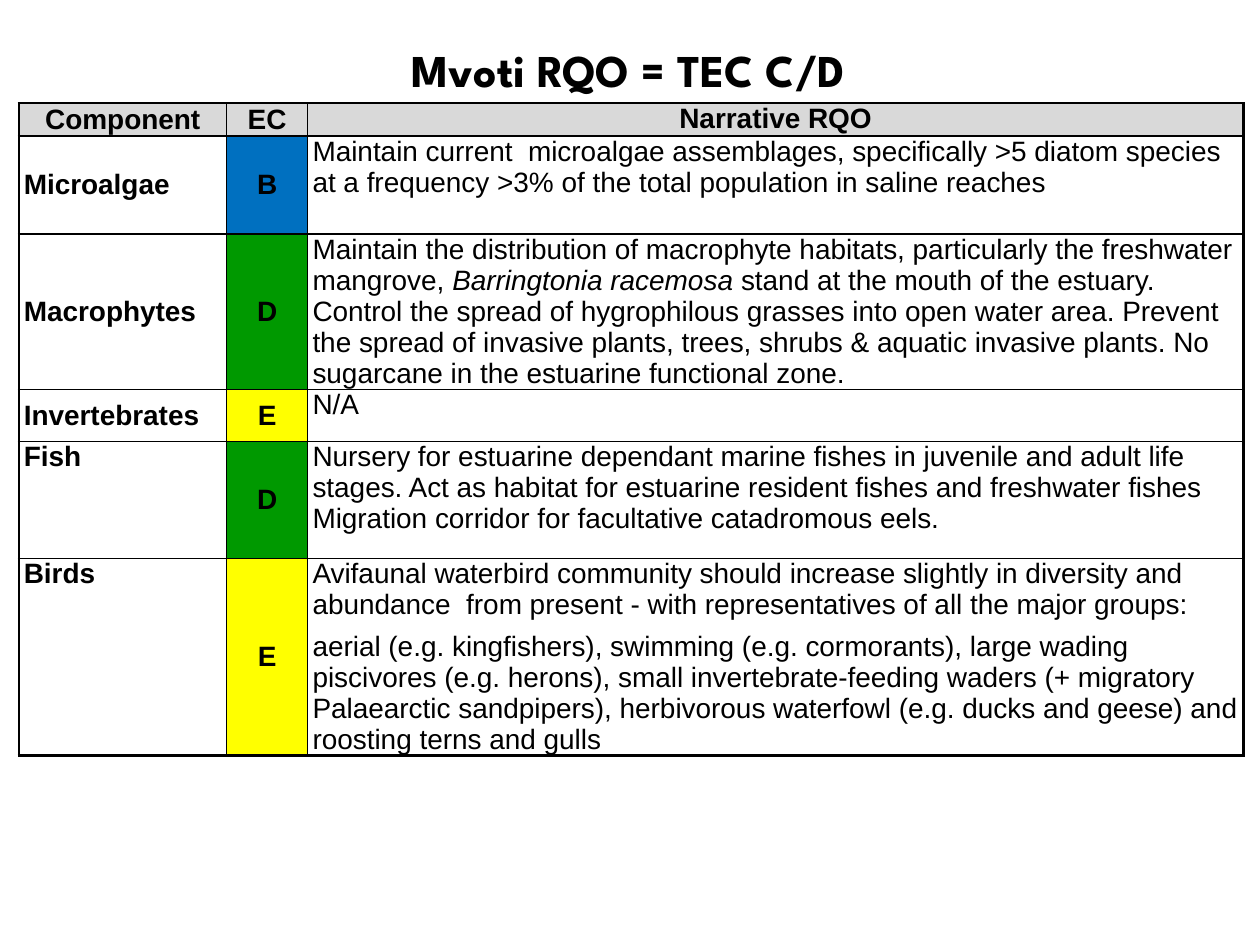
import pptx
import pptx.dml.color
import pptx.enum.text
import pptx.oxml
import pptx.oxml.ns
import pptx.util

Cm = pptx.util.Cm
Pt = pptx.util.Pt
RGBColor = pptx.dml.color.RGBColor
ALIGN = pptx.enum.text.PP_ALIGN
ANCHOR = pptx.enum.text.MSO_ANCHOR

BLACK = RGBColor(0, 0, 0)
WHITE = RGBColor(255, 255, 255)
GREY = RGBColor(0xD9, 0xD9, 0xD9)
BLUE = RGBColor(0, 0x70, 0xC0)
GREEN = RGBColor(0, 0x99, 0)
YELLOW = RGBColor(255, 255, 0)

CLASS_COLOURS = {"B": BLUE, "D": GREEN, "E": YELLOW}
HEADINGS = ["Component", "EC", "Narrative RQO"]
COLUMN_WIDTHS = [4.19, 1.63, 18.87]
ROW_HEIGHTS = [0.66, 1.98, 2.87, 1.04, 2.36, 2.87]

OBJECTIVES = [
    ("Microalgae", ANCHOR.MIDDLE, "B", 6, [[
        ("Maintain current  microalgae assemblages, specifically >5 diatom species "
         "at a frequency >3% of the total population in saline reaches", False)]]),
    ("Macrophytes", ANCHOR.MIDDLE, "D", 6, [[
        ("Maintain the distribution of macrophyte habitats, particularly the "
         "freshwater mangrove, ", False),
        ("Barringtonia racemosa ", True),
        ("stand at the mouth of the estuary. Control the spread of hygrophilous "
         "grasses into open water area. Prevent the spread of invasive plants, "
         "trees, shrubs & aquatic invasive plants. No sugarcane in the estuarine "
         "functional zone.", False)]]),
    ("Invertebrates", ANCHOR.MIDDLE, "E", 6, [[("N/A", False)]]),
    ("Fish", ANCHOR.TOP, "D", 0, [
        [("Nursery for estuarine dependant marine fishes in juvenile and adult life "
          "stages. Act as habitat for estuarine resident fishes and freshwater "
          "fishes", False)],
        [("Migration corridor for facultative catadromous eels.", False)]]),
    ("Birds", ANCHOR.TOP, "E", 6, [
        [("Avifaunal waterbird community should increase slightly in diversity and "
          "abundance  from present - with representatives of all the major groups:",
          False)],
        [("aerial (e.g. kingfishers), swimming (e.g. cormorants), large wading "
          "piscivores (e.g. herons), small invertebrate-feeding waders (+ migratory "
          "Palaearctic sandpipers), herbivorous waterfowl (e.g. ducks and geese) and "
          "roosting terns and gulls", False)]]),
]


class SlideBuilder:
    title_font = "League Spartan"
    table_font = "Arial"
    title_size = Pt(26)
    table_size = Pt(16)
    inner_line = Pt(1)
    outer_line = Pt(1.5)

    def __init__(self, slide):
        self.slide = slide

    def add_run(self, paragraph, text, font, size, bold, italic=False):
        run = paragraph.add_run()
        run.text = text
        run.font.name = font
        run.font.size = size
        run.font.bold = bold
        run.font.italic = italic
        run.font.color.rgb = BLACK

    def title(self, text, left, top, width, height):
        shape = self.slide.shapes.title
        shape.left, shape.top = Cm(left), Cm(top)
        shape.width, shape.height = Cm(width), Cm(height)
        shape.text_frame.vertical_anchor = ANCHOR.MIDDLE
        paragraph = shape.text_frame.paragraphs[0]
        paragraph.alignment = ALIGN.CENTER
        self.add_run(paragraph, text, self.title_font, self.title_size, True)

    def table(self, left, top, widths, heights):
        frame = self.slide.shapes.add_table(
            len(heights), len(widths), Cm(left), Cm(top),
            Cm(sum(widths)), Cm(sum(heights)))
        table = frame.table
        table.horz_banding = False
        for column, width in zip(table.columns, widths):
            column.width = Cm(width)
        for row, height in zip(table.rows, heights):
            row.height = Cm(height)
        return table

    def cell(self, table, row, column, paragraphs, fill, bold=True,
             align=ALIGN.LEFT, anchor=ANCHOR.MIDDLE, gap=0):
        cell = table.cell(row, column)
        cell.margin_left = cell.margin_right = Cm(0.1)
        cell.margin_top = cell.margin_bottom = 0
        cell.vertical_anchor = anchor
        cell.fill.solid()
        cell.fill.fore_color.rgb = fill
        for index, runs in enumerate(paragraphs):
            frame = cell.text_frame
            paragraph = frame.add_paragraph() if index else frame.paragraphs[0]
            paragraph.alignment = align
            paragraph.space_before = Pt(gap if index else 0)
            for text, italic in runs:
                self.add_run(paragraph, text, self.table_font, self.table_size,
                             bold, italic)
        self.borders(cell, {
            "lnL": column == 0,
            "lnR": column == len(table.columns) - 1,
            "lnT": row == 0,
            "lnB": row == len(table.rows) - 1,
        })

    def borders(self, cell, sides):
        properties = cell._tc.get_or_add_tcPr()
        for index, (tag, is_outer) in enumerate(sides.items()):
            width = self.outer_line if is_outer else self.inner_line
            properties.insert(index, pptx.oxml.parse_xml(
                f'<a:{tag} {pptx.oxml.ns.nsdecls("a")} w="{int(width)}">'
                f'<a:solidFill><a:srgbClr val="{BLACK}"/></a:solidFill></a:{tag}>'))


def main():
    presentation = pptx.Presentation()
    presentation.slide_width = Cm(25.4)
    presentation.slide_height = Cm(19.05)
    slide = presentation.slides.add_slide(presentation.slide_layouts[5])
    builder = SlideBuilder(slide)

    table = builder.table(0.38, 2.08, COLUMN_WIDTHS, ROW_HEIGHTS)
    for column, heading in enumerate(HEADINGS):
        anchor = ANCHOR.TOP if column == 2 else ANCHOR.MIDDLE
        builder.cell(table, 0, column, [[(heading, False)]], GREY,
                     align=ALIGN.CENTER, anchor=anchor)
    for row, objective in enumerate(OBJECTIVES, start=1):
        component, anchor, ecological_class, gap, narrative = objective
        builder.cell(table, row, 0, [[(component, False)]], WHITE, anchor=anchor)
        builder.cell(table, row, 1, [[(ecological_class, False)]],
                     CLASS_COLOURS[ecological_class], align=ALIGN.CENTER)
        builder.cell(table, row, 2, narrative, WHITE, bold=False,
                     anchor=ANCHOR.TOP, gap=gap)

    builder.title("Mvoti RQO = TEC C/D", 0.76, 0.36, 23.83, 2.06)
    presentation.save("out.pptx")


if __name__ == "__main__":
    main()
